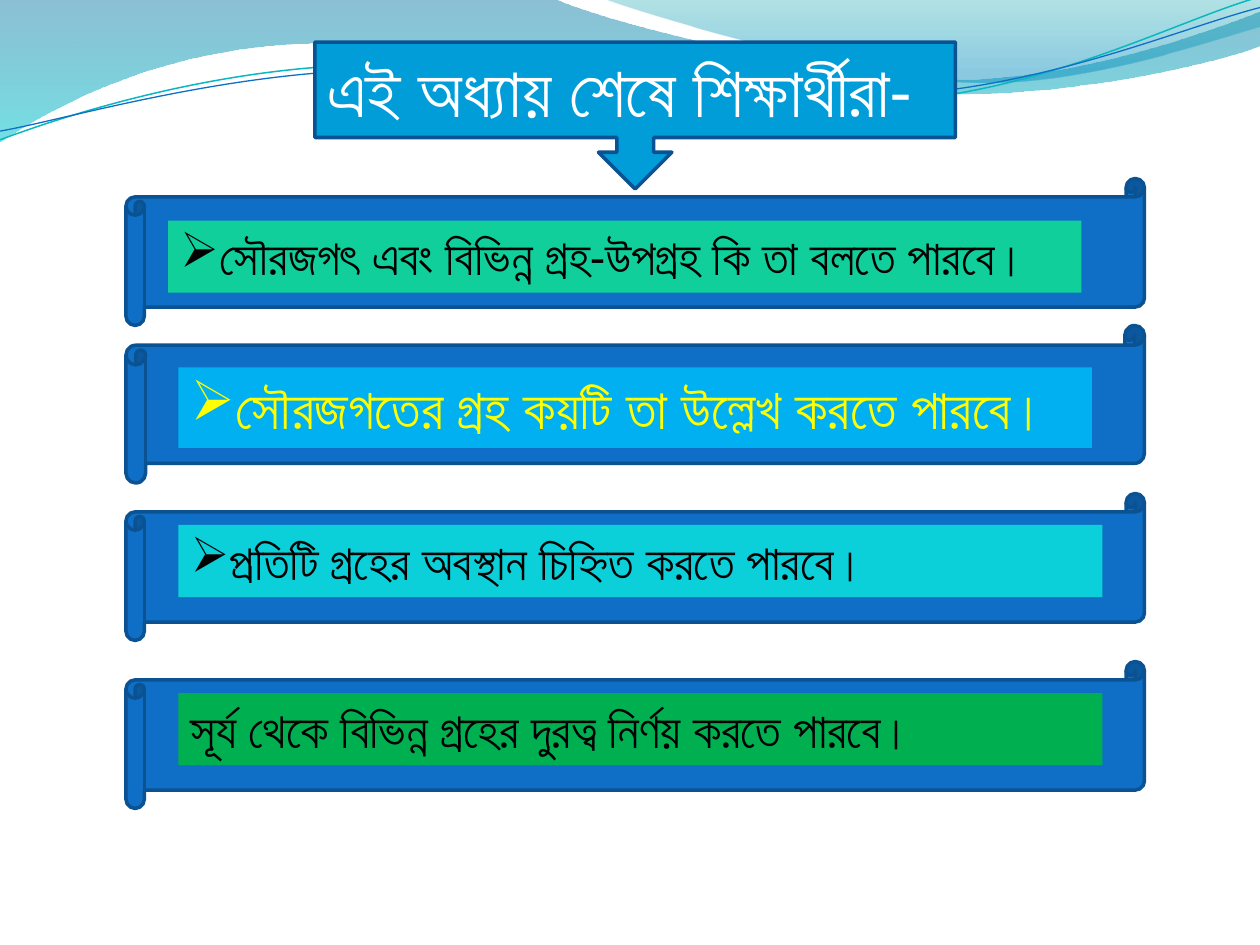
from lxml import etree
from pptx import Presentation
from pptx.dml.color import RGBColor
from pptx.enum.shapes import MSO_SHAPE
from pptx.enum.text import MSO_ANCHOR, MSO_AUTO_SIZE, PP_ALIGN
from pptx.oxml import parse_xml
from pptx.oxml.ns import qn
from pptx.util import Pt

CALLOUT = MSO_SHAPE.DOWN_ARROW_CALLOUT
SCROLL = MSO_SHAPE.HORIZONTAL_SCROLL
RECT = MSO_SHAPE.RECTANGLE
TOP, MIDDLE = MSO_ANCHOR.TOP, MSO_ANCHOR.MIDDLE
GROW = MSO_AUTO_SIZE.SHAPE_TO_FIT_TEXT
LEFT = PP_ALIGN.LEFT
NS = "http://schemas.openxmlformats.org/drawingml/2006/main"
# Bengali YYA: letter plus dot, and the single code point
YA_DOT, YYA = "য" + chr(0x9BC), chr(0x9DF)
COLORS = {
    "blue": "0F6FC6", "edge": "0B5292", "title": "009DD9", "white": "FFFFFF",
    "black": "000000", "yellow": "FFFF00", "mint": "10CF9B", "sky": "00B0F0",
    "cyan": "0BD0D9", "green": "00B050", "teal": "0AB8BF",
    "deep": "0074A1", "aqua": "00C6CF", "sea": "00A1A9", "lake": "008BBF",
}


def trace(start, parts, close):
    """Draw a path whose parts are line ends (one point) or Bezier curves (three)."""
    pen = slide.shapes.build_freeform(Pt(start[0]), Pt(start[1]))
    pen.add_line_segments([(Pt(x), Pt(y)) for part in parts for x, y in part], close=close)
    shape = pen.convert_to_shape()
    shape.shadow.inherit = False
    lines = iter(list(shape._element.iter(qn("a:lnTo"))))
    for part in parts:
        group = [next(lines) for _ in part]
        if len(group) == 3:
            bend = etree.Element(qn("a:cubicBezTo"))
            group[0].addprevious(bend)
            for line in group:
                bend.append(line[0])
                line.getparent().remove(line)
    return shape


def add_box(kind, place, fill, edge=None, label="", size=28, ink="black", anchor=TOP):
    box = slide.shapes.add_shape(kind, *[Pt(n) for n in place])
    box.shadow.inherit = False
    box.fill.solid()
    box.fill.fore_color.rgb = RGBColor.from_string(COLORS[fill])
    if edge:
        box.line.color.rgb = RGBColor.from_string(COLORS[edge])
        box.line.width = Pt(2)
    else:
        box.line.fill.background()
    if label:
        frame = box.text_frame
        frame.text = label.replace(YA_DOT, YYA)
        frame.word_wrap = True
        frame.vertical_anchor = anchor
        para = frame.paragraphs[0]
        para.alignment = LEFT
        font = para.runs[0].font
        font.name, font.size = "Calibri", Pt(size)
        font.color.rgb = RGBColor.from_string(COLORS[ink])
    return box


deck = Presentation()
deck.slide_width, deck.slide_height = Pt(720), Pt(540)
slide = deck.slides.add_slide(deck.slide_layouts[6])

# Shaded waves: start, parts, gradient stops (position, colour, opacity)
waves = [
    ((0, 0), [
        [(316.8, -0.7)],
        [(342.7, 12.2), (478.1, 45.4), (545.8, 45.4)],
        [(614.2, 45.4), (689.8, 18.7), (720, 6.5)],
        [(720.7, 25.9)],
        [(707.8, 31.7), (626.4, 54.7), (537.1, 54)],
        [(446.4, 54), (275, 20.2), (185, 24.5)],
        [(92.9, 25.9), (33.1, 59.8), (-0.7, 81.4)],
    ], [(0, "deep", 45), (100, "aqua", 55)]),
    ((344.9, -0.7), [
        [(366.5, 7.9), (491, 44.6), (553.7, 46.8)],
        [(616.3, 49.7), (691.9, 23), (720, 15.1)],
        [(720, 0)],
    ], [(0, "sea", 30), (80, "lake", 45)]),
]
for start, parts, stops in waves:
    wave = trace(start, parts, True)
    wave.line.fill.background()
    marks = "".join(
        f'<a:gs pos="{pos * 1000}"><a:srgbClr val="{COLORS[name]}">'
        f'<a:alpha val="{alpha * 1000}"/></a:srgbClr></a:gs>'
        for pos, name, alpha in stops)
    grad = parse_xml(f'<a:gradFill xmlns:a="{NS}"><a:gsLst>{marks}</a:gsLst>'
                     '<a:lin ang="5400000" scaled="0"/></a:gradFill>')
    wave._element.spPr.find(qn("a:custGeom")).addnext(grad)

# Thin curves across the waves
curves = [
    ((0, 79.9), [
        [(34.6, 67), (113.8, 41), (199.4, 37.4)],
        [(284.4, 33.8), (427, 64.1), (513.4, 57.6)],
        [(599.8, 51.1), (675.4, 10.8), (718.6, -1.4)],
    ], "teal", 0.85),
    ((0, 74.9), [
        [(33.8, 69.1), (118.1, 43.9), (203.8, 40.3)],
        [(290.2, 36.7), (429.8, 60.5), (516.2, 54)],
        [(601.9, 48.2), (677.5, 15.1), (720, 4.3)],
    ], "blue", 0.75),
]
for start, parts, color, width in curves:
    curve = trace(start, parts, False)
    curve.fill.background()
    curve.line.color.rgb = RGBColor.from_string(COLORS[color])
    curve.line.width = Pt(width)

add_box(CALLOUT, (180, 24, 366, 84), "title", "edge",
        "এই অধ্যায় শেষে শিক্ষার্থীরা-", 40, "white", MIDDLE)

# Scroll top and height, plate place, plate fill, text, size, ink, bullet
goals = [
    (186, 90, (102, 210, 522, 46), "sky",
     "সৌরজগতের গ্রহ কয়টি তা উল্লেখ করতে পারবে।", 32, "yellow", True),
    (282, 84, (102, 300, 528, 41.2), "cyan",
     "প্রতিটি গ্রহের অবস্থান চিহ্নিত করতে পারবে।", 28, "black", True),
    (102, 84, (96, 126, 522, 41.2), "mint",
     "সৌরজগৎ এবং বিভিন্ন গ্রহ-উপগ্রহ কি তা বলতে পারবে।", 28, "black", True),
    (378, 84, (102, 396, 528, 41.2), "green",
     "সূর্য থেকে বিভিন্ন গ্রহের দুরত্ব নির্ণয় করতে পারবে।", 28, "black", False),
]
for top, height, place, fill, label, size, ink, bullet in goals:
    add_box(SCROLL, (72, top, 582, height), "blue", "edge")
    plate = add_box(RECT, place, fill, None, label, size, ink)
    plate.text_frame.auto_size = GROW
    if bullet:
        # Wingdings draws this letter as the arrowhead ➢
        props = plate.text_frame.paragraphs[0]._p.get_or_add_pPr()
        etree.SubElement(props, qn("a:buFont")).set("typeface", "Wingdings")
        etree.SubElement(props, qn("a:buChar")).set("char", "Ø")

deck.save("out.pptx")
